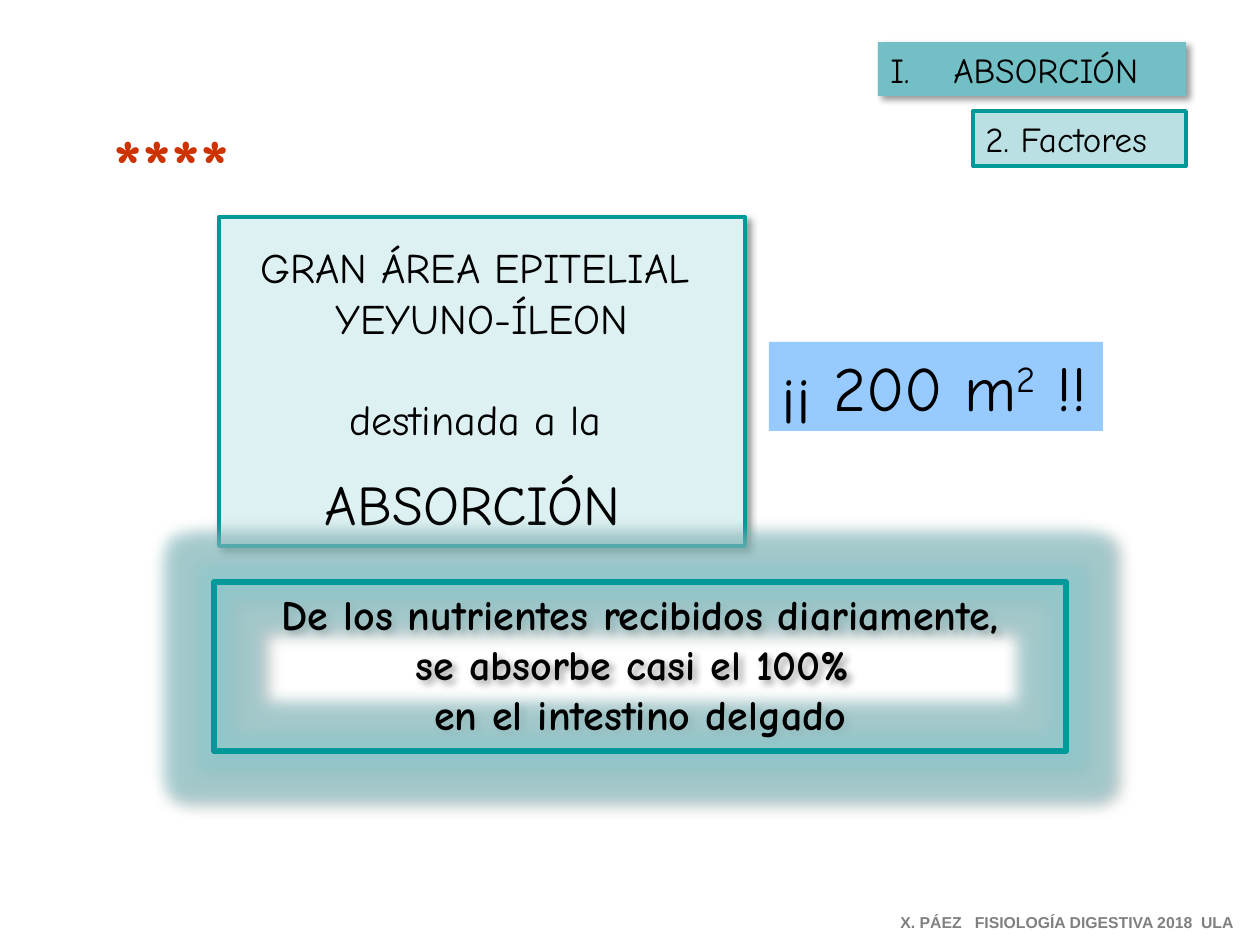
from dataclasses import dataclass

from lxml.etree import SubElement
from pptx import Presentation
from pptx.dml.color import RGBColor
from pptx.enum.shapes import MSO_SHAPE as Shape
from pptx.enum.text import MSO_ANCHOR as Anchor, PP_ALIGN as Align
from pptx.oxml import parse_xml
from pptx.oxml.ns import nsdecls, qn
from pptx.util import Emu, Pt


@dataclass(frozen=True)
class Theme:
    ink: str = "000000"
    teal: str = "009999"
    header: str = "72BFC5"
    subheader: str = "BBE0E3"
    panel: str = "DEF1F2"
    sky: str = "97CBFF"
    glow: str = "8FCDD1"
    stars: str = "CC3300"
    grey: str = "808080"
    hand: str = "Comic Neue"
    sans: str = "Arial"
    footer_size: int = 9
    label_size: int = 20
    body_size: int = 24
    strong_size: int = 32
    area_size: int = 36
    star_size: int = 44


THEME = Theme()
SCALE = 914400 / 126


def px(length):
    return Emu(round(length * SCALE))


def effects(glow=False):
    halo = (f'<a:glow rad="{Pt(18)}"><a:srgbClr val="{THEME.glow}">'
            '<a:alpha val="60000"/></a:srgbClr></a:glow>') if glow else ""
    return parse_xml(
        f'<a:effectLst {nsdecls("a")}>{halo}'
        f'<a:outerShdw blurRad="{Pt(4)}" dist="{Pt(3)}" dir="2700000" algn="tl" rotWithShape="0">'
        f'<a:srgbClr val="{THEME.ink}"><a:alpha val="40000"/></a:srgbClr>'
        '</a:outerShdw></a:effectLst>')


def add_box(slide, box, fill=None, line=None, line_width=2.25, shadow=False, glow=False):
    panel = slide.shapes.add_shape(Shape.RECTANGLE, *map(px, box))
    panel.shadow.inherit = False
    if fill:
        panel.fill.solid()
        panel.fill.fore_color.rgb = RGBColor.from_string(fill)
    else:
        panel.fill.background()
    if line:
        panel.line.color.rgb = RGBColor.from_string(line)
        panel.line.width = Pt(line_width)
    else:
        panel.line.fill.background()
    if shadow:
        properties = panel.fill._xPr
        properties.replace(properties.find(qn("a:effectLst")), effects(glow))
    return panel.text_frame


def add_label(slide, box):
    return slide.shapes.add_textbox(*map(px, box)).text_frame


def write(frame, text, size=THEME.body_size, font=THEME.hand, color=THEME.ink, bold=False,
          align=Align.LEFT, before=0, shadow=False, baseline=0, same_line=False):
    frame.word_wrap = True
    frame.vertical_anchor = Anchor.TOP
    paragraph = frame.paragraphs[-1]
    if paragraph.runs and not same_line:
        paragraph = frame.add_paragraph()
    if not same_line:
        paragraph.alignment = align
        paragraph.space_before = Pt(before)
    run = paragraph.add_run()
    run.text = text
    run.font.size = Pt(size)
    run.font.bold = bold
    run.font.color.rgb = RGBColor.from_string(color)
    run.font.name = font
    properties = run.font._rPr
    if shadow:
        properties.find(qn("a:solidFill")).addnext(effects())
    if baseline:
        properties.set("baseline", str(baseline * 1000))
    return paragraph


def add_epithelium(slide, box):
    frame = add_box(slide, box, THEME.panel, THEME.teal, shadow=True)
    frame.margin_top = px(25)
    for text, size, before in (
        ("GRAN ÁREA EPITELIAL ", THEME.body_size, 0),
        ("YEYUNO-ÍLEON", THEME.body_size, 0),
        ("destinada a la ", THEME.body_size, 29),
        ("ABSORCIÓN ", THEME.strong_size, 14.5),
    ):
        write(frame, text, size=size, before=before, align=Align.CENTER)


def add_nutrients(slide, box):
    frame = add_box(slide, box, line=THEME.teal, line_width=3, shadow=True, glow=True)
    for text in ("De los nutrientes recibidos diariamente,",
                 "se absorbe casi el 100% ",
                 "en el intestino delgado"):
        write(frame, text, bold=True, align=Align.CENTER)


def add_stars(slide, box):
    write(add_label(slide, box), "****", size=THEME.star_size, color=THEME.stars,
          bold=True, shadow=True)


def add_area(slide, box):
    frame = add_box(slide, box, THEME.sky)
    write(frame, "¡¡ 200 m", size=THEME.area_size)
    write(frame, "2", size=THEME.area_size, baseline=30, same_line=True)
    write(frame, " !!", size=THEME.area_size, same_line=True)


def add_headers(slide, box):
    left, top, width, height = box
    chapter = add_box(slide, (left, top, width, 54), THEME.header, shadow=True)
    heading = write(chapter, "ABSORCIÓN", size=THEME.label_size)
    properties = heading._p.get_or_add_pPr()
    properties.set("marL", str(px(63)))
    properties.set("indent", str(-px(63)))
    SubElement(properties, qn("a:buFont"), typeface=THEME.hand)
    SubElement(properties, qn("a:buAutoNum"), type="romanUcPeriod")

    section_box = (left + width - 213, top + height - 55, 213, 55)
    section = add_box(slide, section_box, THEME.subheader, THEME.teal)
    write(section, "2. Factores", size=THEME.label_size)


def add_footer(slide, box):
    write(add_label(slide, box), "X. PÁEZ   FISIOLOGÍA DIGESTIVA 2018  ULA",
          size=THEME.footer_size, font=THEME.sans, color=THEME.grey, bold=True)


def main():
    deck = Presentation()
    deck.slide_width, deck.slide_height = px(1260), px(945)
    slide = deck.slides.add_slide(deck.slide_layouts[6])
    add_epithelium(slide, (219, 217, 526, 329))
    add_nutrients(slide, (214, 582, 852, 169))
    add_stars(slide, (101, 111, 209, 106))
    add_area(slide, (769, 342, 334, 89))
    add_headers(slide, (878, 42, 308, 124))
    add_footer(slide, (888, 907, 373, 32))
    deck.save("out.pptx")


if __name__ == "__main__":
    main()
